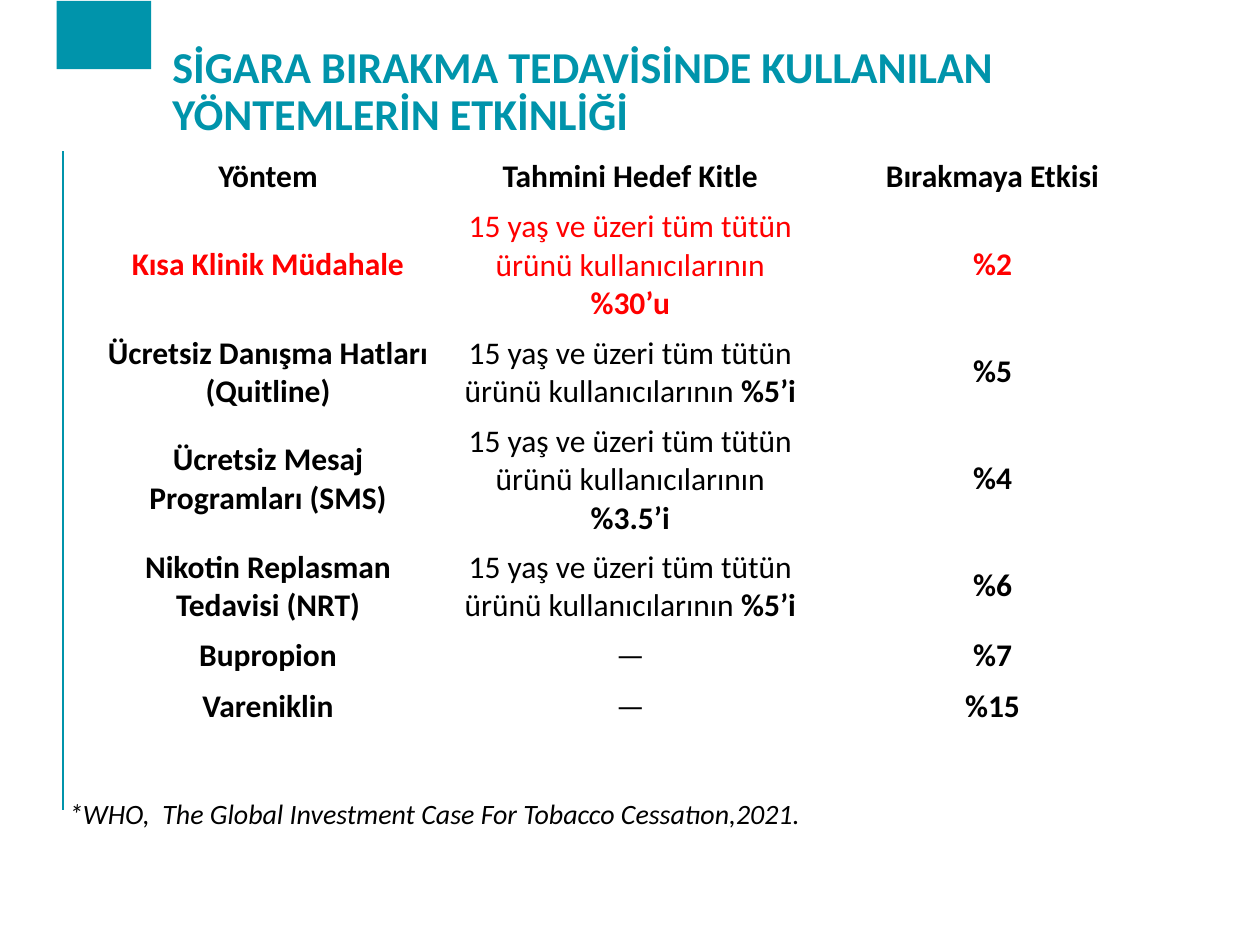
from lxml import etree
from pptx import Presentation
from pptx.dml.color import RGBColor
from pptx.enum.shapes import MSO_CONNECTOR, MSO_SHAPE
from pptx.enum.text import MSO_ANCHOR, PP_ALIGN
from pptx.oxml.ns import qn
from pptx.util import Pt

RECTANGLE, STRAIGHT = MSO_SHAPE.RECTANGLE, MSO_CONNECTOR.STRAIGHT
TOP, MIDDLE = MSO_ANCHOR.TOP, MSO_ANCHOR.MIDDLE
LEFT, CENTER = PP_ALIGN.LEFT, PP_ALIGN.CENTER
TEAL = RGBColor(0x00, 0x94, 0xAB)
BLACK = RGBColor(0x00, 0x00, 0x00)
RED = RGBColor(0xFF, 0x00, 0x00)

# Content
TITLE = "SİGARA BIRAKMA TEDAVİSİNDE KULLANILAN YÖNTEMLERİN ETKİNLİĞİ"
SOURCE_NOTE = "*WHO,  The Global Investment Case For Tobacco Cessatıon,2021."
HEADINGS = ("Yöntem", "Tahmini Hedef Kitle", "Bırakmaya Etkisi")
AUDIENCE = "15 yaş ve üzeri tüm tütün ürünü kullanıcılarının "
NO_AUDIENCE = "—"
# method, share of the audience, effect on quitting, colour, row height
METHODS = [
    ("Kısa Klinik Müdahale", "%30’u", "%2", RED, 68),
    ("Ücretsiz Danışma Hatları (Quitline)", "%5’i", "%5", BLACK, 47.5),
    ("Ücretsiz Mesaj Programları (SMS)", "%3.5’i", "%4", BLACK, 68),
    ("Nikotin Replasman Tedavisi (NRT)", "%5’i", "%6", BLACK, 47.5),
    ("Bupropion", None, "%7", BLACK, 27.5),
    ("Vareniklin", None, "%15", BLACK, 27.5),
]
HEADING_HEIGHT = 27.5
COLUMN_WIDTH = 207

# Text formats
TITLE_FONT = {"size": Pt(25.2), "bold": True}
NOTE_FONT = {"size": Pt(16), "italic": True}
CELL_FONT = {"size": Pt(18)}


def write(frame, runs, font_format, color, align=LEFT, line_spacing=None):
    """Fill the first paragraph with (text, bold) runs."""
    paragraph = frame.paragraphs[0]
    paragraph.alignment = align
    paragraph.line_spacing = line_spacing
    for text, bold in runs:
        run = paragraph.add_run()
        run.text = text
        for name, value in {"name": "Calibri", "bold": bold, **font_format}.items():
            setattr(run.font, name, value)
        run.font.color.rgb = color


def add_text(slide, box, text, font_format, color, top_inset):
    frame = slide.shapes.add_textbox(*map(Pt, box)).text_frame
    frame.word_wrap = True
    frame.vertical_anchor = TOP
    frame.margin_top = Pt(top_inset)
    write(frame, [(text, False)], font_format, color, line_spacing=0.9)


def add_decoration(slide):
    rule = slide.shapes.add_connector(STRAIGHT, Pt(36), Pt(86.4), Pt(36), Pt(463))
    rule.line.color.rgb = TEAL
    rule.line.width = Pt(1)
    etree.SubElement(rule._element.spPr, qn("a:effectLst"))

    block = slide.shapes.add_shape(RECTANGLE, Pt(32.4), Pt(0.5), Pt(54), Pt(39))
    block.shadow.inherit = False
    block.fill.solid()
    block.fill.fore_color.rgb = TEAL
    block.line.fill.background()


def add_methods_table(slide):
    # Each row: height, colour, and the runs of its three cells
    rows = [(HEADING_HEIGHT, BLACK, [[(heading, True)] for heading in HEADINGS])]
    for method, share, effect, color, height in METHODS:
        audience = [(AUDIENCE, False), (share, True)] if share else [(NO_AUDIENCE, False)]
        rows.append((height, color, [[(method, True)], audience, [(effect, True)]]))

    table = slide.shapes.add_table(
        len(rows), len(HEADINGS), Pt(49.7), Pt(86.4),
        Pt(COLUMN_WIDTH * len(HEADINGS)), Pt(sum(row[0] for row in rows)),
    ).table
    table.first_row = table.horz_banding = False
    for column in table.columns:
        column.width = Pt(COLUMN_WIDTH)
    for row, (height, color, cells) in zip(table.rows, rows):
        row.height = Pt(height)
        for cell, runs in zip(row.cells, cells):
            cell.fill.background()
            cell.vertical_anchor = MIDDLE
            write(cell.text_frame, runs, CELL_FONT, color, CENTER)
    # Plain grid: drop the style that draws cell borders
    table._tbl.tblPr.find(qn("a:tableStyleId")).text = "{2D5ABB26-0587-4C30-8999-92F81FD0307C}"


def main():
    deck = Presentation()
    deck.slide_width, deck.slide_height = Pt(720), Pt(540)
    slide = deck.slides.add_slide(deck.slide_layouts[6])
    add_decoration(slide)
    add_text(slide, (91.4, 10.8, 606.2, 59), TITLE, TITLE_FONT, TEAL, 15)
    add_text(slide, (32.4, 453.6, 655.2, 39.6), SOURCE_NOTE, NOTE_FONT, BLACK, 3.6)
    add_methods_table(slide)
    deck.save("out.pptx")


if __name__ == "__main__":
    main()
